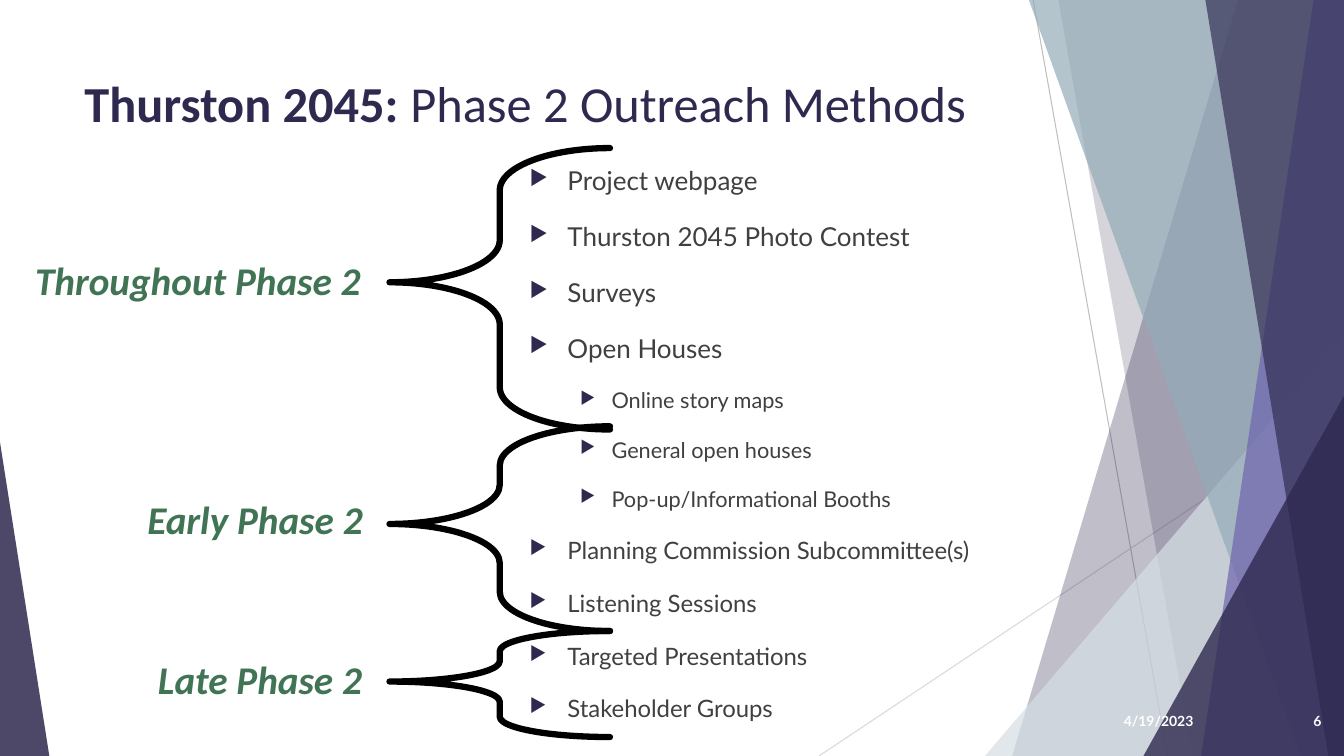
from dataclasses import dataclass

from lxml.etree import SubElement
from pptx import Presentation
from pptx.dml.color import RGBColor
from pptx.enum.shapes import MSO_CONNECTOR, MSO_SHAPE
from pptx.enum.text import MSO_ANCHOR, MSO_AUTO_SIZE, PP_ALIGN
from pptx.oxml.ns import qn
from pptx.shapes.autoshape import Shape
from pptx.slide import Slide
from pptx.text.text import TextFrame, _Paragraph
from pptx.util import Emu, Pt

EMU_PER_PX = 9525
SLIDE_WIDTH, SLIDE_HEIGHT = 1280, 720

NAVY = RGBColor(0x2E, 0x29, 0x4E)
VIOLET = RGBColor(0x6F, 0x65, 0xAE)
STEEL = RGBColor(0x93, 0xAB, 0xB8)
MIST = RGBColor(0xD6, 0xDF, 0xE4)
GREEN = RGBColor(0x40, 0x74, 0x54)
CHARCOAL = RGBColor(0x40, 0x40, 0x40)
SILVER = RGBColor(0xBF, 0xBF, 0xBF)
LIGHT_GRAY = RGBColor(0xD9, 0xD9, 0xD9)
BLACK = RGBColor(0, 0, 0)
WHITE = RGBColor(0xFF, 0xFF, 0xFF)


@dataclass(frozen=True)
class Ray:
    start: tuple[int, int]
    end: tuple[int, int]
    color: RGBColor


@dataclass(frozen=True)
class Band:
    top_left: int
    bottom_left: int
    color: RGBColor
    opacity: int


@dataclass(frozen=True)
class Wedge:
    left: int
    top: int
    width: int
    apex: int
    color: RGBColor
    opacity: int


@dataclass(frozen=True)
class Phase:
    name: str
    label_left: int
    label_top: int
    label_width: int
    brace_top: int
    brace_height: int


@dataclass(frozen=True)
class Method:
    text: str
    size: float
    level: int = 0


RAYS = [
    Ray((984, 0), (1112, 720), SILVER),
    Ray((1280, 387), (780, 720), LIGHT_GRAY),
]
FACETS = [
    Band(1179, 964, NAVY, 30),
    Band(1008, 1136, NAVY, 20),
    Wedge(938, 320, 342, 1, MIST, 72),
    Band(980, 1239, STEEL, 70),
    Band(1251, 1144, VIOLET, 70),
    Band(1148, 1265, NAVY, 65),
    Wedge(1089, 377, 191, 1, NAVY, 80),
    Wedge(0, 421, 47, 0, NAVY, 85),
]
PHASES = [
    Phase("Throughout Phase 2", 24, 239, 332, 141, 268),
    Phase("Early Phase 2", 131, 467, 226, 406, 195),
    Phase("Late Phase 2", 141, 619, 216, 601, 101),
]
METHODS = [
    Method("Project webpage", 18.6),
    Method("Thurston 2045 Photo Contest", 18.6),
    Method("Surveys", 18.6),
    Method("Open Houses", 18.6),
    Method("Online story maps", 15.5, 1),
    Method("General open houses", 15.5, 1),
    Method("Pop-up/Informational Booths", 15.5, 1),
    Method("Planning Commission Subcommittee(s)", 17.1),
    Method("Listening Sessions", 17.1),
    Method("Targeted Presentations", 17.1),
    Method("Stakeholder Groups", 17.1),
]
INDENTS = [(36, -36), (78, -30)]


def px(length: int) -> Emu:
    return Emu(length * EMU_PER_PX)


def add_ray(slide: Slide, ray: Ray) -> None:
    connector = slide.shapes.add_connector(
        MSO_CONNECTOR.STRAIGHT, *map(px, ray.start + ray.end))
    connector.line.color.rgb = ray.color
    connector.line.width = Pt(0.75)
    SubElement(connector.element.spPr, qn("a:effectLst"))


def add_facet(slide: Slide, facet: Band | Wedge) -> None:
    if isinstance(facet, Band):
        builder = slide.shapes.build_freeform(facet.top_left, 0, EMU_PER_PX)
        builder.add_line_segments([
            (SLIDE_WIDTH, 0),
            (SLIDE_WIDTH, SLIDE_HEIGHT),
            (facet.bottom_left, SLIDE_HEIGHT),
        ])
        shape = builder.convert_to_shape()
    else:
        shape = slide.shapes.add_shape(
            MSO_SHAPE.ISOSCELES_TRIANGLE, px(facet.left), px(facet.top),
            px(facet.width), px(SLIDE_HEIGHT - facet.top))
        shape.adjustments[0] = facet.apex
    shape.shadow.inherit = False
    shape.fill.solid()
    shape.fill.fore_color.rgb = facet.color
    shape.line.fill.background()
    color = shape.element.spPr.find(qn("a:solidFill")).find(qn("a:srgbClr"))
    SubElement(color, qn("a:alpha"), val=str(facet.opacity * 1000))


def add_brace(slide: Slide, phase: Phase) -> None:
    brace: Shape = slide.shapes.add_shape(
        MSO_SHAPE.LEFT_BRACE, px(371), px(phase.brace_top),
        px(210), px(phase.brace_height))
    brace.adjustments[0] = 0.191
    brace.adjustments[1] = 0.477
    brace.shadow.inherit = False
    brace.fill.background()
    brace.line.color.rgb = BLACK
    brace.line.width = Pt(4.5)
    brace.element.spPr.find(qn("a:ln")).set("cap", "rnd")


def add_text_frame(slide: Slide, left: int, top: int, width: int, height: int) -> TextFrame:
    box = slide.shapes.add_textbox(px(left), px(top), px(width), px(height))
    box.text_frame.word_wrap = True
    return box.text_frame


def write(paragraph: _Paragraph, text: str, *, size: float, color: RGBColor,
          font: str, bold: bool = False, italic: bool = False) -> None:
    run = paragraph.add_run()
    run.text = text
    run.font.name = font
    run.font.size = Pt(size)
    run.font.bold = bold
    run.font.italic = italic
    run.font.color.rgb = color


def add_bullet(paragraph: _Paragraph, level: int) -> None:
    margin, indent = INDENTS[level]
    properties = paragraph._p.get_or_add_pPr()
    properties.set("marL", str(px(margin)))
    properties.set("indent", str(px(indent)))
    SubElement(SubElement(properties, qn("a:buClr")), qn("a:srgbClr"), val=str(NAVY))
    SubElement(properties, qn("a:buSzPct"), val="80000")
    SubElement(properties, qn("a:buChar"), char="▶")


def add_methods(slide: Slide) -> None:
    frame = add_text_frame(slide, 495, 145, 731, 554)
    for index, method in enumerate(METHODS):
        paragraph = frame.add_paragraph() if index else frame.paragraphs[0]
        add_bullet(paragraph, method.level)
        paragraph.level = method.level
        paragraph.line_spacing = 1.25
        paragraph.space_before = Pt(6 if index else 0)
        paragraph.space_after = Pt(6)
        write(paragraph, method.text, size=method.size, color=CHARCOAL, font="Lato")


def add_footer(slide: Slide, text: str, left: int, width: int) -> None:
    frame = add_text_frame(slide, left, 668, width, 38)
    frame.vertical_anchor = MSO_ANCHOR.MIDDLE
    frame.paragraphs[0].alignment = PP_ALIGN.RIGHT
    write(frame.paragraphs[0], text, size=10, color=WHITE, font="Lato", bold=True)


def add_phase_label(slide: Slide, phase: Phase) -> None:
    frame = add_text_frame(slide, phase.label_left, phase.label_top, phase.label_width, 55)
    frame.word_wrap = False
    frame.auto_size = MSO_AUTO_SIZE.SHAPE_TO_FIT_TEXT
    write(frame.paragraphs[0], phase.name, size=28, color=GREEN,
          font="Calibri", bold=True, italic=True)


def main() -> None:
    presentation = Presentation()
    presentation.slide_width = px(SLIDE_WIDTH)
    presentation.slide_height = px(SLIDE_HEIGHT)
    slide = presentation.slides.add_slide(presentation.slide_layouts[6])
    for ray in RAYS:
        add_ray(slide, ray)
    for facet in FACETS:
        add_facet(slide, facet)
    title = add_text_frame(slide, 71, 64, 902, 138).paragraphs[0]
    write(title, "Thurston 2045: ", size=36, color=NAVY, font="Calibri", bold=True)
    write(title, "Phase 2 Outreach Methods", size=36, color=NAVY, font="Calibri")
    add_footer(slide, "6", 1196, 72)
    add_footer(slide, "4/19/2023", 1035, 111)
    add_methods(slide)
    for phase in PHASES:
        add_brace(slide, phase)
        add_phase_label(slide, phase)
    presentation.save("out.pptx")


if __name__ == "__main__":
    main()
